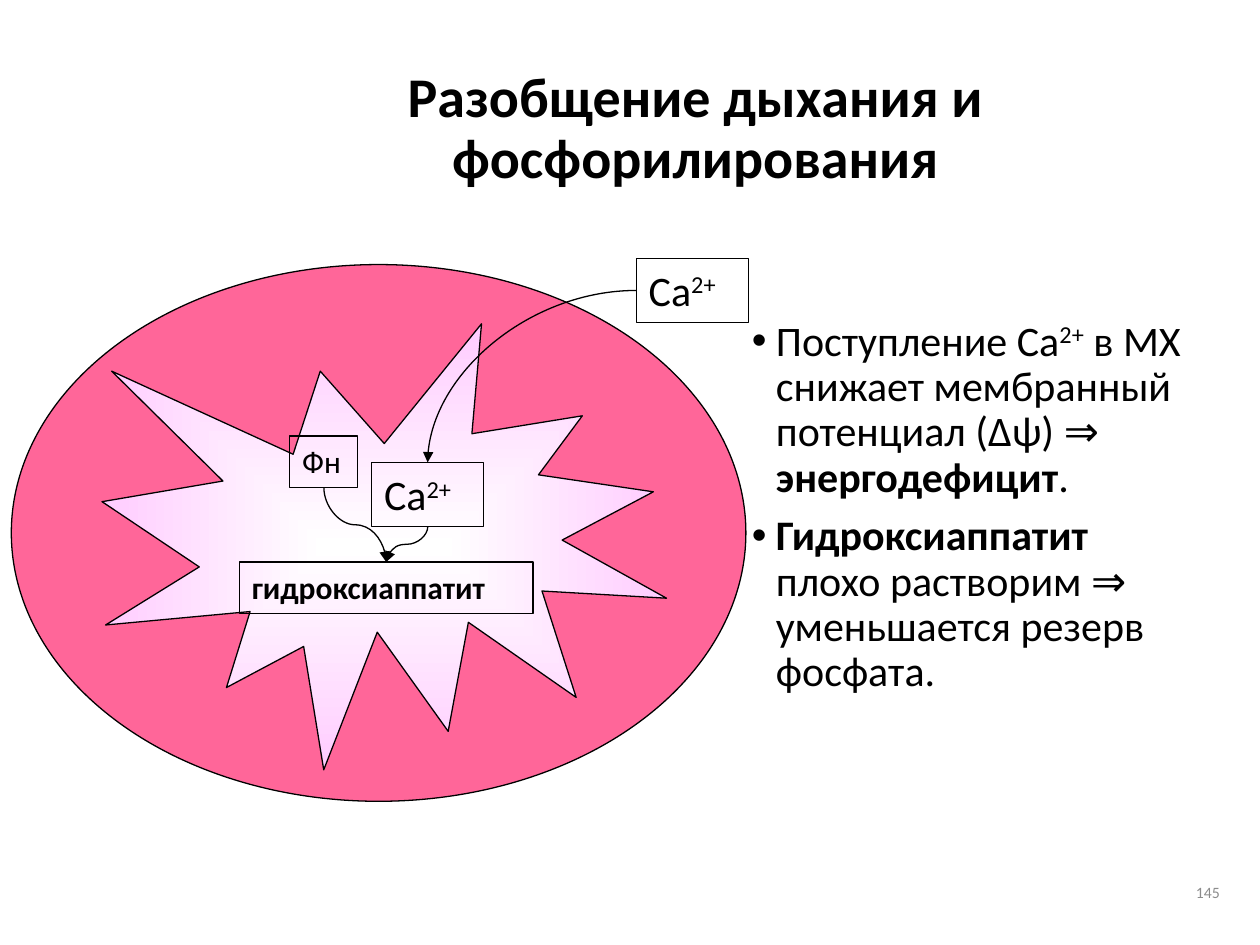
import pptx
import pptx.util
import pptx.dml.color
import pptx.enum.shapes
import pptx.enum.text
import pptx.oxml
import pptx.oxml.ns
from lxml import etree

Inches, Pt = pptx.util.Inches, pptx.util.Pt
RGB = pptx.dml.color.RGBColor
Shape = pptx.enum.shapes.MSO_SHAPE
Align, Anchor = pptx.enum.text.PP_ALIGN, pptx.enum.text.MSO_ANCHOR
Fit = pptx.enum.text.MSO_AUTO_SIZE
qn = pptx.oxml.ns.qn

BLACK = RGB(0, 0, 0)
GRAY = RGB(0x8C, 0x8C, 0x8C)
PINK = RGB(0xFF, 0x66, 0x99)

# Content: a run is (text, style), where "b" is bold and "^" is superscript
TITLE = [("Разобщение дыхания и фосфорилирования", "b")]
POINTS = [
    [("Поступление Ca", ""), ("2+", "^"),
     (" в МХ снижает мембранный потенциал (Δψ) ⇒ ", ""),
     ("энергодефицит", "b"), (".", "")],
    [("Гидроксиаппатит ", "b"),
     ("плохо растворим ⇒ уменьшается резерв фосфата.", "")],
]
NUMBER = [("145", "")]
ION = [("Ca", ""), ("2+", "^")]
LABELS = {  # name: (place, runs, size)
    "outer": ((5.05, 2.05, 0.89, 0.51), ION, 24),
    "inner": ((2.95, 3.67, 0.89, 0.51), ION, 24),
    "phos": ((2.3, 3.46, 0.54, 0.41), [("Фн", "")], 18),
    "apatite": ((1.9, 4.46, 2.33, 0.41), [("гидроксиаппатит", "b")], 18),
}
ARROWS = [  # from, its side, to, its side
    ("outer", 1, "inner", 0),
    ("phos", 2, "apatite", 0),
    ("inner", 2, "apatite", 0),
]

deck = pptx.Presentation()
deck.slide_width, deck.slide_height = Inches(10), Inches(7.5)
slide = deck.slides.add_slide(deck.slide_layouts[6])
shapes = slide.shapes


def write(par, runs, size, color=BLACK):
    for text, style in runs:
        run = par.add_run()
        run.text = text
        font = run.font
        font.name, font.size, font.bold = "Calibri", Pt(size), style == "b"
        font.color.rgb = color
        if style == "^":
            run._r.get_or_add_rPr().set("baseline", "30000")


def add_text(place, anchor):
    frame = shapes.add_textbox(*map(Inches, place)).text_frame
    frame.word_wrap, frame.vertical_anchor = True, anchor
    return frame


def add_shape(kind, place):
    shape = shapes.add_shape(kind, *map(Inches, place))
    shape.shadow.inherit = False
    shape.line.color.rgb, shape.line.width = BLACK, Pt(0.75)
    return shape


def add_label(place, runs, size):
    box = add_shape(Shape.RECTANGLE, place)
    box.fill.background()
    frame = box.text_frame
    frame.word_wrap, frame.auto_size = False, Fit.SHAPE_TO_FIT_TEXT
    frame.vertical_anchor = Anchor.TOP
    frame.paragraphs[0].alignment = Align.LEFT
    write(frame.paragraphs[0], runs, size)
    return box


def add_arrow(start, side, end, goal):
    line = shapes.add_connector(pptx.enum.shapes.MSO_CONNECTOR.CURVE, 0, 0, 0, 0)
    line.begin_connect(start, side)
    line.end_connect(end, goal)
    line.line.color.rgb, line.line.width = BLACK, Pt(0.75)
    props = line._element.spPr
    etree.SubElement(props.find(qn("a:ln")), qn("a:tailEnd"), type="triangle")
    etree.SubElement(props, qn("a:effectLst"))
    if side == 1:  # a single bend: sideways, then down
        props.find(qn("a:prstGeom")).set("prst", "curvedConnector2")
        return
    # An S-bend that leaves downward is a sideways one turned by 90 degrees
    right = line.end_x > line.begin_x
    midx, midy = line.left + line.width // 2, line.top + line.height // 2
    wide, high = line.height, line.width
    line.left, line.top = midx - wide // 2, midy - high // 2
    line.width, line.height = wide, high
    frame = props.find(qn("a:xfrm"))
    frame.set("rot", str((270 if right else 90) * 60000))
    frame.set("flipH", "1" if right else "0")
    frame.set("flipV", "0")


# Title
par = add_text((1.26, 0.23, 8.52, 1.6), Anchor.MIDDLE).paragraphs[0]
par.alignment, par.line_spacing = Align.CENTER, 0.9
write(par, TITLE, 32)

# Bullet points
frame = add_text((5.87, 2.49, 3.7, 5.35), Anchor.TOP)
for i, runs in enumerate(POINTS):
    par = frame.add_paragraph() if i else frame.paragraphs[0]
    par.line_spacing, par.space_before = 0.9, Pt(7.5)
    props = par._p.get_or_add_pPr()
    props.set("marL", str(Inches(0.19)))
    props.set("indent", str(-Inches(0.19)))
    etree.SubElement(props, qn("a:buFont"), typeface="Arial")
    etree.SubElement(props, qn("a:buChar"), char="•")
    write(par, runs, 24)

# Slide number
par = add_text((7.7, 6.83, 2.08, 0.5), Anchor.MIDDLE).paragraphs[0]
par.alignment = Align.RIGHT
write(par, NUMBER, 9, GRAY)

# Mitochondrion and the burst inside it
cell = add_shape(Shape.OVAL, (0.09, 2.1, 5.83, 4.26))
cell.fill.solid()
cell.fill.fore_color.rgb = PINK
burst = add_shape(Shape.EXPLOSION1, (0.81, 2.57, 4.48, 3.54))
glow = pptx.oxml.parse_xml(
    '<a:gradFill xmlns:a="http://schemas.openxmlformats.org/drawingml/2006/main">'
    '<a:gsLst><a:gs pos="0"><a:srgbClr val="FFFFFF"/></a:gs>'
    '<a:gs pos="100000"><a:srgbClr val="FFCCFF"/></a:gs></a:gsLst>'
    '<a:path path="shape"><a:fillToRect l="50000" t="50000" r="50000" b="50000"/>'
    '</a:path></a:gradFill>')
burst._element.spPr.find(qn("a:prstGeom")).addnext(glow)

# Labels and the arrows between them
boxes = {name: add_label(*label) for name, label in LABELS.items()}
for start, side, end, goal in ARROWS:
    add_arrow(boxes[start], side, boxes[end], goal)

deck.save("out.pptx")
